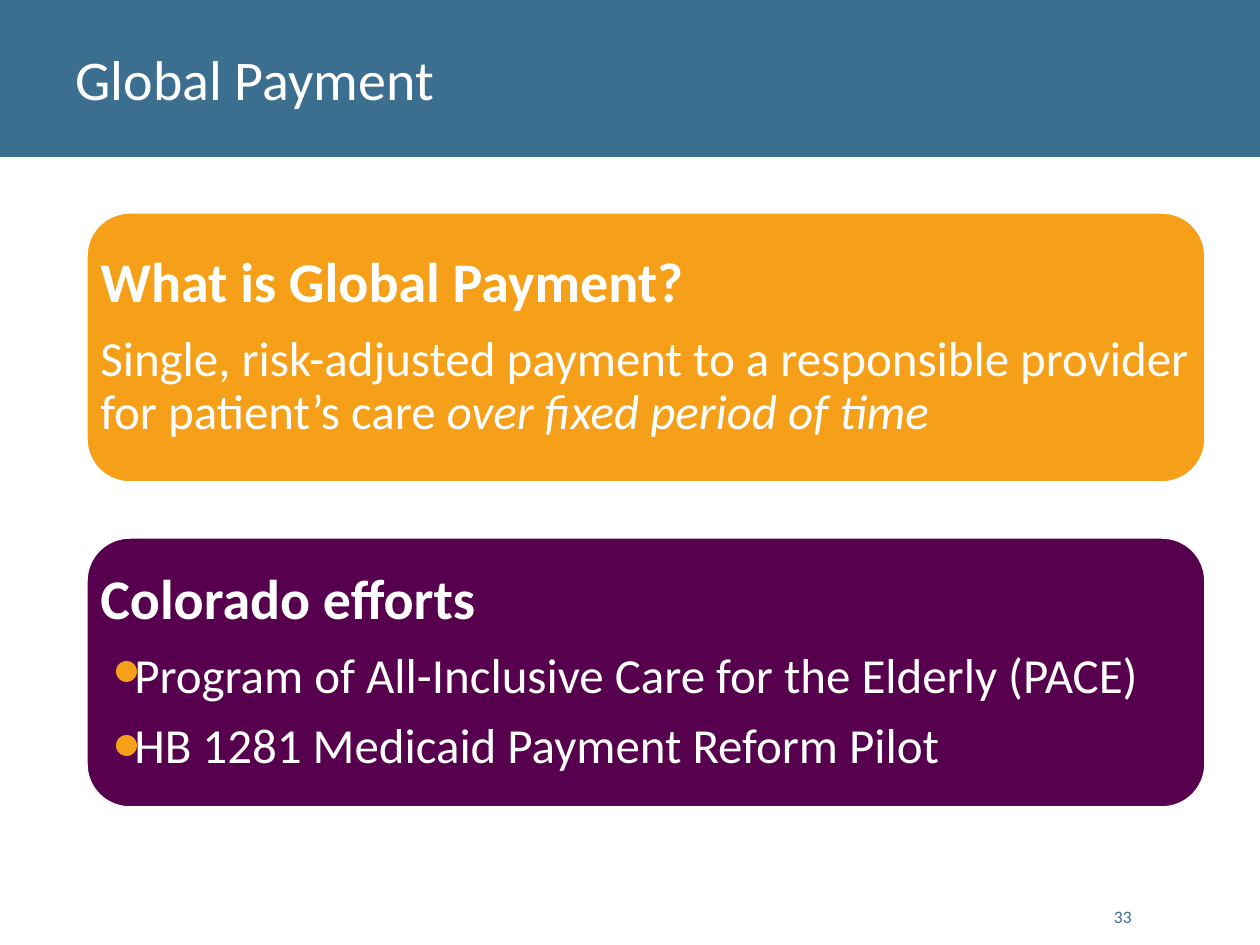
from pptx import Presentation
from pptx.dml.color import RGBColor
from pptx.enum.shapes import MSO_SHAPE as Preset
from pptx.enum.text import MSO_ANCHOR as Anchor, PP_ALIGN as Align
from pptx.util import Emu, Pt

BLUE = RGBColor(0x3B, 0x6E, 0x8F)
ORANGE = RGBColor(0xF6, 0xA0, 0x1A)
PURPLE = RGBColor(0x56, 0x00, 0x4E)
WHITE = RGBColor(0xFF, 0xFF, 0xFF)

TITLE = "Global Payment"
PAGE_NUMBER = "33"
HEADING = {"size": 32, "bold": True}
BODY = {"size": 28, "bold": False}
ITALIC = {"size": 28, "bold": False, "italic": True}
PANELS = [
    (ORANGE, [
        (0, [("What is Global Payment?", HEADING)]),
        (0, [("Single, risk-adjusted payment to a responsible provider for patient’s care ", BODY),
             ("over fixed period of time", ITALIC)]),
    ]),
    (PURPLE, [
        (0, [("Colorado efforts", HEADING)]),
        (34, [("Program of All-Inclusive Care for the Elderly (PACE)", BODY)]),
        (34, [("HB 1281 Medicaid Payment Reform Pilot", BODY)]),
    ]),
]

PANEL_LEFT, PANEL_TOP, PANEL_WIDTH, PANEL_HEIGHT = 84, 210, 1124, 275
PANEL_STEP = 325
PANEL_INSET = 3
DOT_LEFT, DOT_TOP, DOT_STEP, DOT_SIZE = 116, 661, 74, 21
DOT_COUNT = 2


def px(length):
    return Emu(length * 914400 // 126)


def add_shape(slide, preset, box, color):
    shape = slide.shapes.add_shape(preset, *map(px, box))
    shape.shadow.inherit = False
    shape.fill.solid()
    shape.fill.fore_color.rgb = color
    shape.line.fill.background()
    return shape


def add_run(paragraph, text, font_format, color=WHITE):
    run = paragraph.add_run()
    run.text = text
    run.font.name = "Calibri"
    run.font.color.rgb = color
    for name, value in font_format.items():
        setattr(run.font, name, Pt(value) if name == "size" else value)


def add_label(slide, box, text, size, color, anchor, alignment):
    frame = slide.shapes.add_textbox(*map(px, box)).text_frame
    frame.word_wrap = True
    frame.vertical_anchor = anchor
    paragraph = frame.paragraphs[0]
    paragraph.alignment = alignment
    add_run(paragraph, text, {"size": size}, color)


def add_panel(slide, top, color, paragraphs):
    box = (PANEL_LEFT, top, PANEL_WIDTH, PANEL_HEIGHT)
    shape = add_shape(slide, Preset.ROUNDED_RECTANGLE, box, color)
    shape.line.color.rgb = WHITE
    shape.line.width = Pt(4.33)
    frame = shape.text_frame
    frame.word_wrap = True
    frame.vertical_anchor = Anchor.MIDDLE
    for side in ("left", "top", "right", "bottom"):
        setattr(frame, f"margin_{side}", px(PANEL_INSET))
    for index, (indent, runs) in enumerate(paragraphs):
        paragraph = frame.add_paragraph() if index else frame.paragraphs[0]
        paragraph.alignment = Align.LEFT
        paragraph.line_spacing = 0.9
        paragraph.space_after = Pt(round(0.35 * runs[0][1]["size"], 1))
        if indent:
            paragraph._p.get_or_add_pPr().set("marL", str(px(indent)))
        for text, font_format in runs:
            add_run(paragraph, text, font_format)


def main():
    presentation = Presentation()
    presentation.slide_width, presentation.slide_height = px(1260), px(945)
    slide = presentation.slides.add_slide(presentation.slide_layouts[6])

    add_shape(slide, Preset.RECTANGLE, (0, 0, 1260, 157), BLUE)
    add_label(slide, (63, 0, 1134, 157), TITLE, 32, WHITE, Anchor.MIDDLE, Align.LEFT)
    add_label(slide, (1094, 883, 50, 50), PAGE_NUMBER, 10, BLUE, Anchor.BOTTOM, Align.RIGHT)

    for index, (color, paragraphs) in enumerate(PANELS):
        add_panel(slide, PANEL_TOP + index * PANEL_STEP, color, paragraphs)
    for index in range(DOT_COUNT):
        box = (DOT_LEFT, DOT_TOP + index * DOT_STEP, DOT_SIZE, DOT_SIZE)
        add_shape(slide, Preset.OVAL, box, ORANGE)

    presentation.save("out.pptx")


if __name__ == "__main__":
    main()
